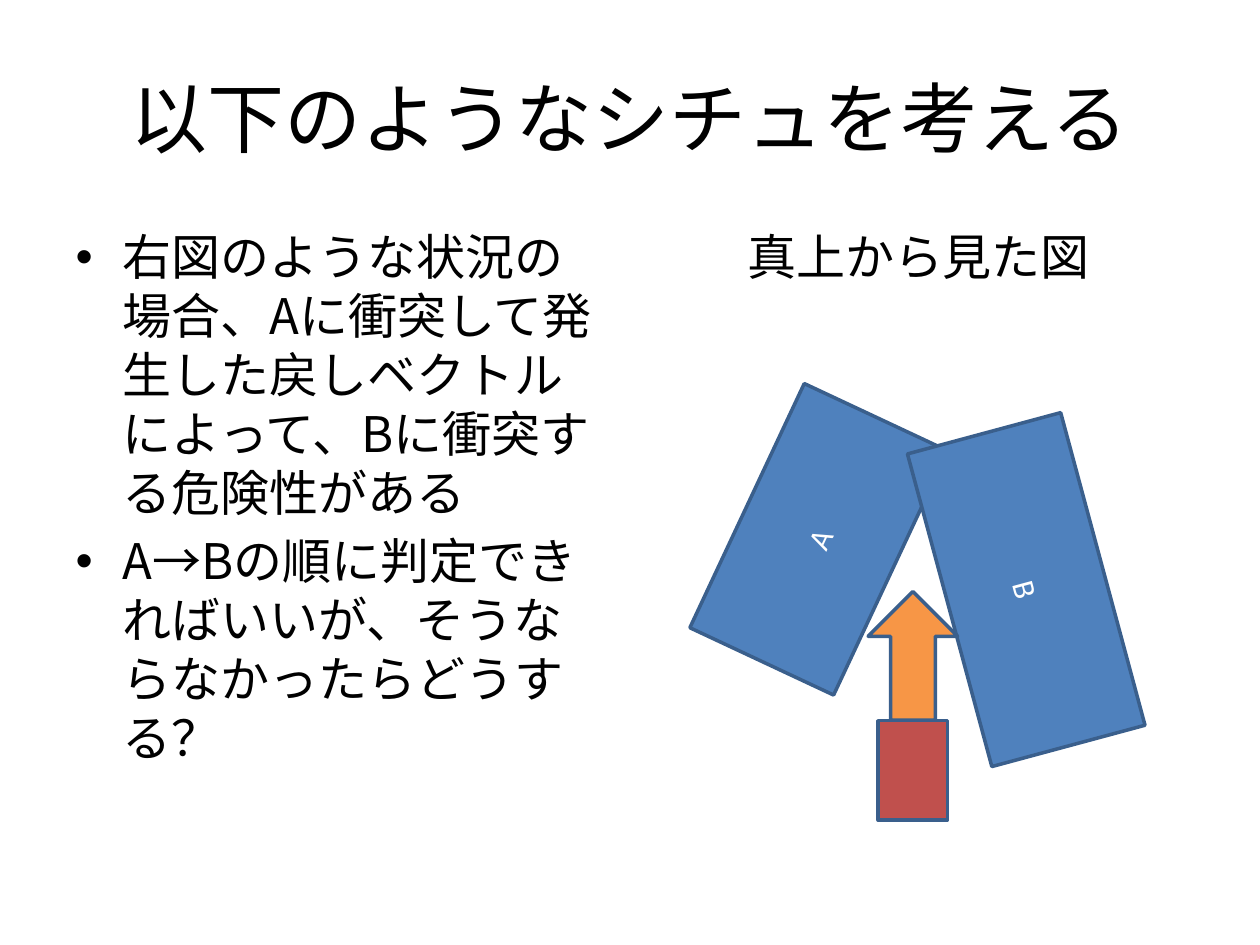
from lxml.etree import SubElement
from pptx import Presentation
from pptx.dml.color import RGBColor
from pptx.enum.shapes import MSO_SHAPE as Shape
from pptx.enum.text import MSO_ANCHOR as Anchor, MSO_AUTO_SIZE as AutoSize, PP_ALIGN as Align
from pptx.oxml.ns import qn
from pptx.util import Inches, Pt

COLORS = {
    "text": "000000",
    "label": "FFFFFF",
    "wall": "4F81BD",
    "player": "C0504D",
    "motion": "F79646",
    "outline": "3A5F8C",
}
TEXT_FONT = "Noto Sans CJK JP"
LABEL_FONT = "Calibri"
TWO_CONTENT_LAYOUT = 3


class SlideBuilder:
    def __init__(self, presentation):
        self.width = presentation.slide_width
        self.height = presentation.slide_height
        layout = presentation.slide_layouts[TWO_CONTENT_LAYOUT]
        self.slide = presentation.slides.add_slide(layout)

    def box(self, left, top, width, height):
        return (
            round(self.width * left / 100),
            round(self.height * top / 100),
            round(self.width * width / 100),
            round(self.height * height / 100),
        )

    def run(self, paragraph, text, size, font, color):
        run = paragraph.add_run()
        run.text = text
        run.font.size = Pt(size)
        run.font.name = font
        run.font.color.rgb = RGBColor.from_string(COLORS[color])
        SubElement(run._r.get_or_add_rPr(), qn("a:ea")).set("typeface", font)

    def placeholder(self, index, area, texts, size, align, anchor, bullets=True):
        shape = self.slide.placeholders[index]
        shape.left, shape.top, shape.width, shape.height = self.box(*area)
        frame = shape.text_frame
        frame.word_wrap = True
        frame.auto_size = AutoSize.NONE
        frame.vertical_anchor = anchor
        for number, text in enumerate(texts):
            paragraph = frame.add_paragraph() if number else frame.paragraphs[0]
            paragraph.alignment = align
            if not bullets:
                SubElement(paragraph._p.get_or_add_pPr(), qn("a:buNone"))
            self.run(paragraph, text, size, TEXT_FONT, "text")

    def title(self, area, text):
        self.placeholder(0, area, [text], 44, Align.CENTER, Anchor.MIDDLE)

    def bullet_list(self, area, texts):
        self.placeholder(1, area, texts, 28, Align.LEFT, Anchor.TOP)

    def caption(self, area, text):
        self.placeholder(2, area, [text], 28, Align.CENTER, Anchor.TOP, bullets=False)

    def block(self, kind, area, color, rotation=0, label=None):
        shape = self.slide.shapes.add_shape(kind, *self.box(*area))
        shape.rotation = rotation
        shape.shadow.inherit = False
        shape.fill.solid()
        shape.fill.fore_color.rgb = RGBColor.from_string(COLORS[color])
        shape.line.color.rgb = RGBColor.from_string(COLORS["outline"])
        shape.line.width = Pt(2)
        if label:
            frame = shape.text_frame
            frame.vertical_anchor = Anchor.MIDDLE
            frame.paragraphs[0].alignment = Align.CENTER
            self.run(frame.paragraphs[0], label, 18, LABEL_FONT, "label")


def main():
    presentation = Presentation()
    presentation.slide_width = Inches(10)
    presentation.slide_height = Inches(7.5)
    builder = SlideBuilder(presentation)

    margin, column, top, height = 5, 44.2, 23.33, 66
    builder.title((margin, 4, 100 - 2 * margin, 16.67), "以下のようなシチュを考える")
    builder.bullet_list((margin, top, column, height), [
        "右図のような状況の場合、Aに衝突して発生した戻しベクトルによって、Bに衝突する危険性がある",
        "A→Bの順に判定できればいいが、そうならなかったらどうする？",
    ])
    builder.caption((100 - margin - column, top, column, height), "真上から見た図")

    builder.block(Shape.RECTANGLE, (54.3, 48.67, 21.4, 16.8), "wall", 295.1, "A")
    builder.block(Shape.RECTANGLE, (68.6, 54, 25.7, 16.8), "wall", 74.9, "B")
    builder.block(Shape.RECTANGLE, (69.7, 76.27, 5.5, 10.53), "player")
    builder.block(Shape.DOWN_ARROW, (68.9, 62.6, 7.1, 13.6), "motion", 180)

    presentation.save("out.pptx")


if __name__ == "__main__":
    main()
